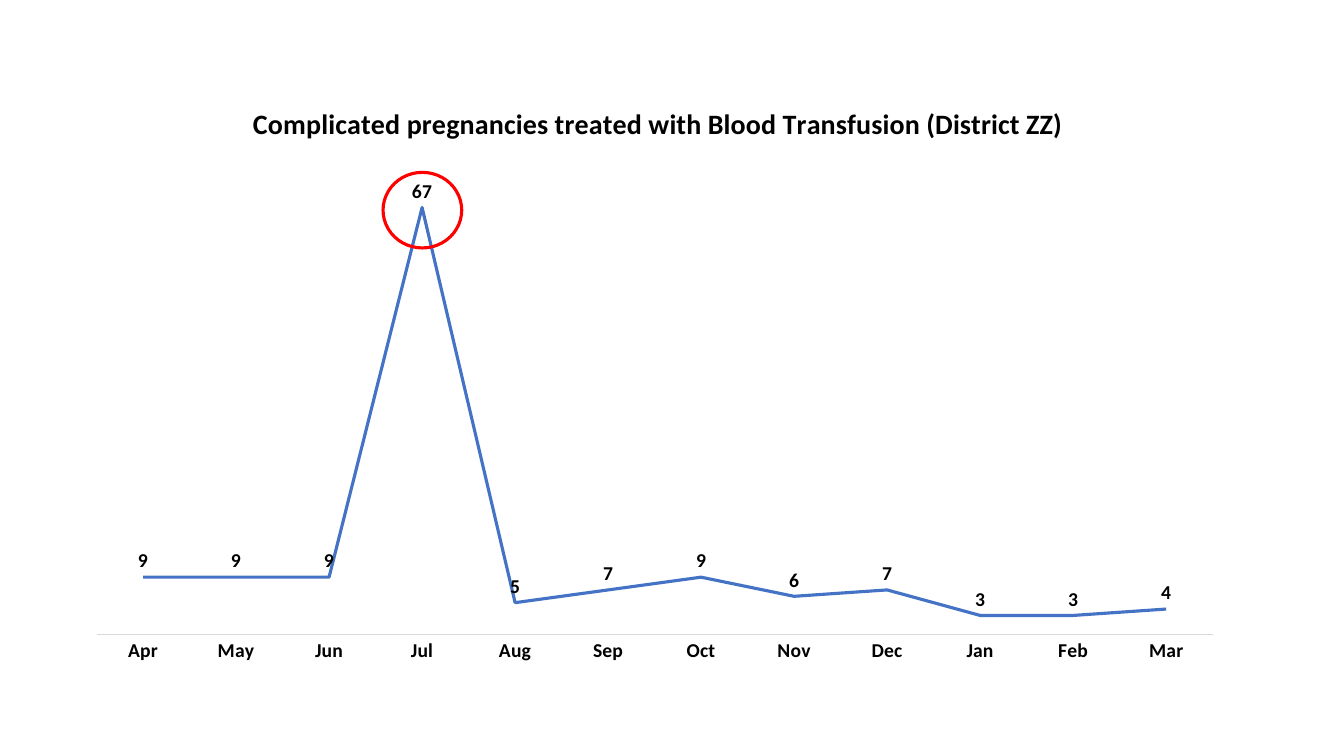
"""Build a slide with a monthly line chart and its peak ringed in red."""
import pptx
import pptx.chart.data
import pptx.dml.color
import pptx.enum.chart
import pptx.enum.shapes
import pptx.oxml
import pptx.oxml.ns
import pptx.util

Pt = pptx.util.Pt
qn = pptx.oxml.ns.qn
enum = pptx.enum.chart
hues = {"text": "000000", "line": "4472C4", "axis": "D9D9D9", "ring": "FF0000"}
hues = {name: pptx.dml.color.RGBColor.from_string(hue) for name, hue in hues.items()}


def write(frame, text, **style):
    frame.text = text
    font = frame.paragraphs[0].runs[0].font
    font.color.rgb = hues[style.pop("hue")]
    for key, value in style.items():
        setattr(font, key, value)


def place(part, spot, **sizes):
    for old in part.findall(qn("c:layout")):
        part.remove(old)
    space = pptx.oxml.ns.nsdecls("c")
    rows = "".join(f'<c:{key} val="{value}"/>' for key, value in sizes.items())
    part.insert(spot, pptx.oxml.parse_xml(
        f"<c:layout {space}><c:manualLayout>{rows}</c:manualLayout></c:layout>"))


deck = pptx.Presentation()
deck.slide_width, deck.slide_height = Pt(960), Pt(540)
slide = deck.slides.add_slide(deck.slide_layouts[6])

data = pptx.chart.data.CategoryChartData()
data.categories = "Apr May Jun Jul Aug Sep Oct Nov Dec Jan Feb Mar".split()
data.add_series("Series 1", [9, 9, 9, 67, 5, 7, 9, 6, 7, 3, 3, 4])
chart = slide.shapes.add_chart(
    enum.XL_CHART_TYPE.LINE, Pt(58.3), Pt(53.3), Pt(819.4), Pt(430.6), data).chart
chart.has_legend = False
chart.font.name, chart.font.size, chart.font.bold = "Calibri", Pt(14), True
chart.font.color.rgb = hues["text"]

title = chart.chart_title
write(title.text_frame, "Complicated pregnancies treated with Blood Transfusion (District ZZ)",
      name="Calibri", size=Pt(20), bold=True, hue="text")
title.include_in_layout = False
space = chart.element if hasattr(chart, "element") else chart._chartSpace
place(space.find(".//" + qn("c:title")), 1, xMode="edge", yMode="edge", x=0.145, y=0.04)
place(space.find(".//" + qn("c:plotArea")), 0, layoutTarget="inner", xMode="edge",
      yMode="edge", x=0.013, y=0.083, w=0.973, h=0.846)

months = chart.category_axis
months.major_tick_mark = enum.XL_TICK_MARK.NONE
months.format.line.color.rgb = hues["axis"]
months.format.line.width = Pt(0.75)
scale = chart.value_axis
scale.visible = False
scale.has_major_gridlines = False
scale.minimum_scale, scale.maximum_scale = 0, 80

plot = chart.plots[0]
plot.vary_by_categories = False
cases = plot.series[0]
cases.smooth = False
cases.marker.style = enum.XL_MARKER_STYLE.NONE
cases.format.line.color.rgb = hues["line"]
cases.format.line.width = Pt(2.25)
labels = cases.data_labels
labels.show_value = True
labels.position = enum.XL_LABEL_POSITION.ABOVE
labels.font.name, labels.font.size, labels.font.bold = "Calibri", Pt(14), True
labels.font.color.rgb = hues["text"]

ring = slide.shapes.add_shape(
    pptx.enum.shapes.MSO_SHAPE.OVAL, Pt(273.6), Pt(123.1), Pt(56.2), Pt(54))
ring.shadow.inherit = False
ring.fill.background()
ring.line.color.rgb = hues["ring"]
ring.line.width = Pt(2.25)

deck.save("out.pptx")
